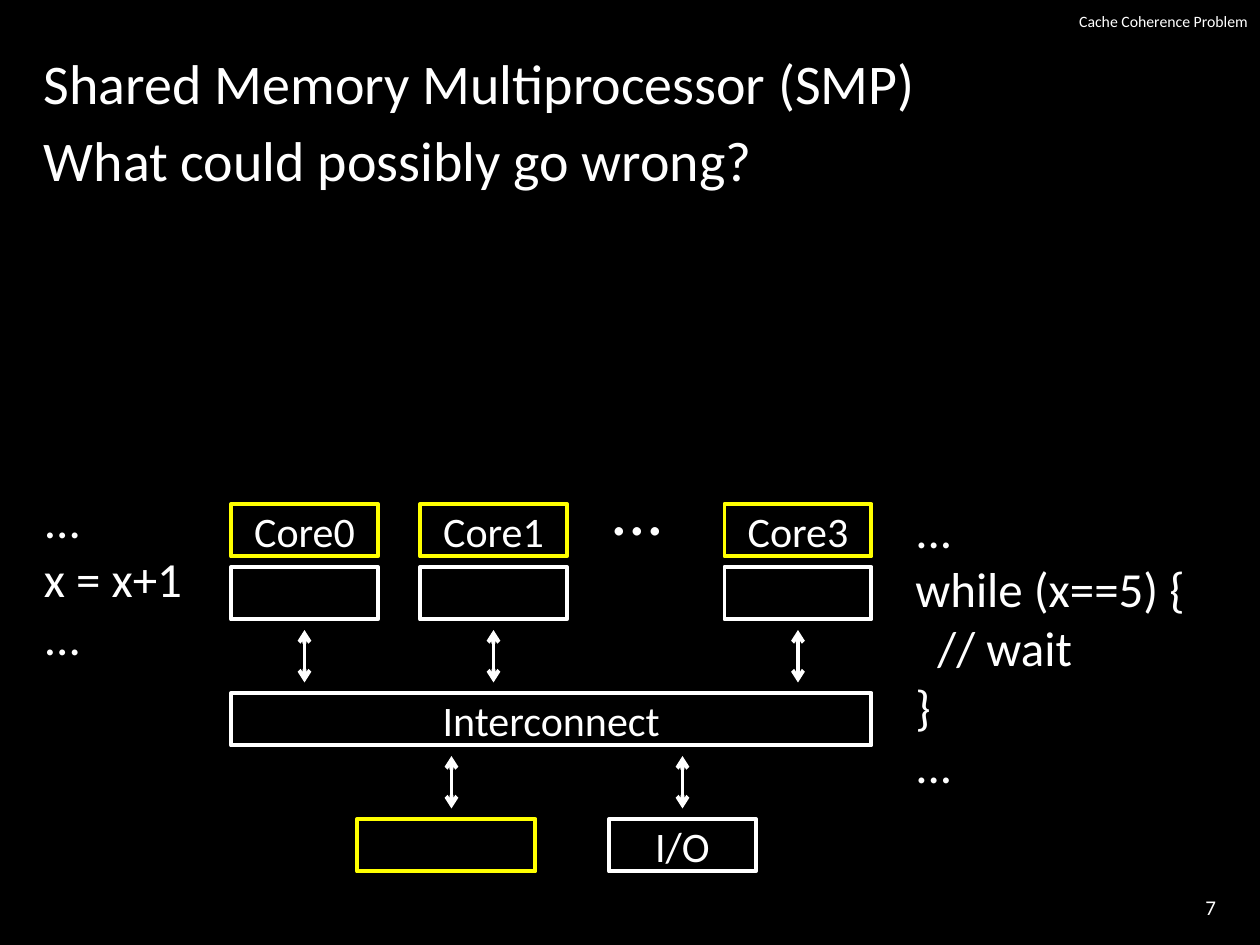
from typing import NamedTuple

from lxml.etree import SubElement
from pptx import Presentation
from pptx.dml.color import RGBColor
from pptx.enum.shapes import MSO_CONNECTOR, MSO_SHAPE
from pptx.enum.text import MSO_ANCHOR as Anchor, PP_ALIGN as Align
from pptx.oxml.ns import qn
from pptx.util import Emu, Pt

PX = 914400 // 120
FONT = "Calibri"
COLORS = {"background": "000000", "ink": "FFFFFF", "highlight": "FFFF00"}
LINE_WIDTH = Pt(2.25)
BOX_H = 50
CORE_W = 140
CORE_TOP, CACHE_TOP, BUS_TOP, DEVICE_TOP = 480, 540, 660, 780
BUS_LEFT, BUS_W = 220, 610


class Box(NamedTuple):
    left: int
    top: int
    width: int = CORE_W
    label: str = ""
    color: str = "ink"


class Note(NamedTuple):
    left: int
    top: int
    width: int
    height: int
    size: int
    paragraphs: tuple[str, ...]
    align: Align = Align.LEFT
    anchor: Anchor = Anchor.TOP
    space_before: int = 0
    wrap: bool = True


class Link(NamedTuple):
    center: int
    top: int


def px(length: int) -> Emu:
    """Turn a px length into EMU."""
    return Emu(length * PX)


def rgb(name: str) -> RGBColor:
    """Look up a named colour."""
    return RGBColor.from_string(COLORS[name])


def write(paragraph, text: str, size: int, align: Align) -> None:
    """Add the lines of a text to a paragraph, one run a line."""
    paragraph.alignment = align
    for number, line in enumerate(text.split("\n")):
        if number:
            paragraph.add_line_break()
        run = paragraph.add_run()
        run.text = line
        run.font.size = Pt(size)
        run.font.name = FONT
        run.font.color.rgb = rgb("ink")


def draw_note(slide, note: Note) -> None:
    """Draw a free text block."""
    frame = slide.shapes.add_textbox(
        px(note.left), px(note.top), px(note.width), px(note.height)
    ).text_frame
    frame.word_wrap = note.wrap
    frame.vertical_anchor = note.anchor
    for number, text in enumerate(note.paragraphs):
        paragraph = frame.add_paragraph() if number else frame.paragraphs[0]
        paragraph.space_before = Pt(note.space_before)
        write(paragraph, text, note.size, note.align)


def draw_box(slide, box: Box) -> None:
    """Draw an outlined component with its label."""
    component = slide.shapes.add_shape(
        MSO_SHAPE.RECTANGLE, px(box.left), px(box.top), px(box.width), px(BOX_H)
    )
    component.shadow.inherit = False
    component.fill.background()
    component.line.color.rgb = rgb(box.color)
    component.line.width = LINE_WIDTH
    if box.label:
        frame = component.text_frame
        frame.vertical_anchor = Anchor.MIDDLE
        write(frame.paragraphs[0], box.label, 24, Align.CENTER)


def draw_link(slide, link: Link) -> None:
    """Draw a vertical two-headed arrow."""
    arrow = slide.shapes.add_connector(
        MSO_CONNECTOR.STRAIGHT,
        px(link.center), px(link.top), px(link.center), px(link.top + BOX_H),
    )
    arrow.line.color.rgb = rgb("ink")
    arrow.line.width = LINE_WIDTH
    outline = arrow.line._get_or_add_ln()
    for end in ("a:headEnd", "a:tailEnd"):
        SubElement(outline, qn(end), type="arrow")
    SubElement(arrow._element.spPr, qn("a:effectLst"))


def main() -> None:
    """Build the shared memory multiprocessor slide."""
    deck = Presentation()
    deck.slide_width, deck.slide_height = px(1200), px(900)
    slide = deck.slides.add_slide(deck.slide_layouts[6])
    slide.background.fill.solid()
    slide.background.fill.fore_color.rgb = rgb("background")

    notes = [
        Note(1070, 840, 100, 48, 12, ("7",), Align.RIGHT, Anchor.MIDDLE),
        Note(740, 0, 460, 40, 9, ("Cache Coherence Problem",), Align.RIGHT, Anchor.MIDDLE),
        Note(30, 40, 1140, 170, 32,
             ("Shared Memory Multiprocessor (SMP)", "What could possibly go wrong?"),
             space_before=6),
        Note(30, 460, 210, 181, 28, ("...", "x = x+1", "...")),
        Note(860, 470, 310, 295, 28, ("...", "while (x==5) {\n  // wait", "}", "...")),
        Note(570, 437, 76, 92, 40, ("...",), wrap=False),
    ]
    cores = {"Core0": BUS_LEFT, "Core1": 400, "Core3": 690}
    boxes = [
        Box(BUS_LEFT, BUS_TOP, BUS_W, "Interconnect"),
        Box(340, DEVICE_TOP, 170, color="highlight"),
        Box(580, DEVICE_TOP, label="I/O"),
    ]
    links = [Link(center, BUS_TOP + 60) for center in (430, 650)]
    for core, left in cores.items():
        boxes += [Box(left, CORE_TOP, label=core, color="highlight"), Box(left, CACHE_TOP)]
        links.append(Link(left + CORE_W // 2, CACHE_TOP + 60))

    for note in notes:
        draw_note(slide, note)
    for box in boxes:
        draw_box(slide, box)
    for link in links:
        draw_link(slide, link)
    deck.save("out.pptx")


if __name__ == "__main__":
    main()
